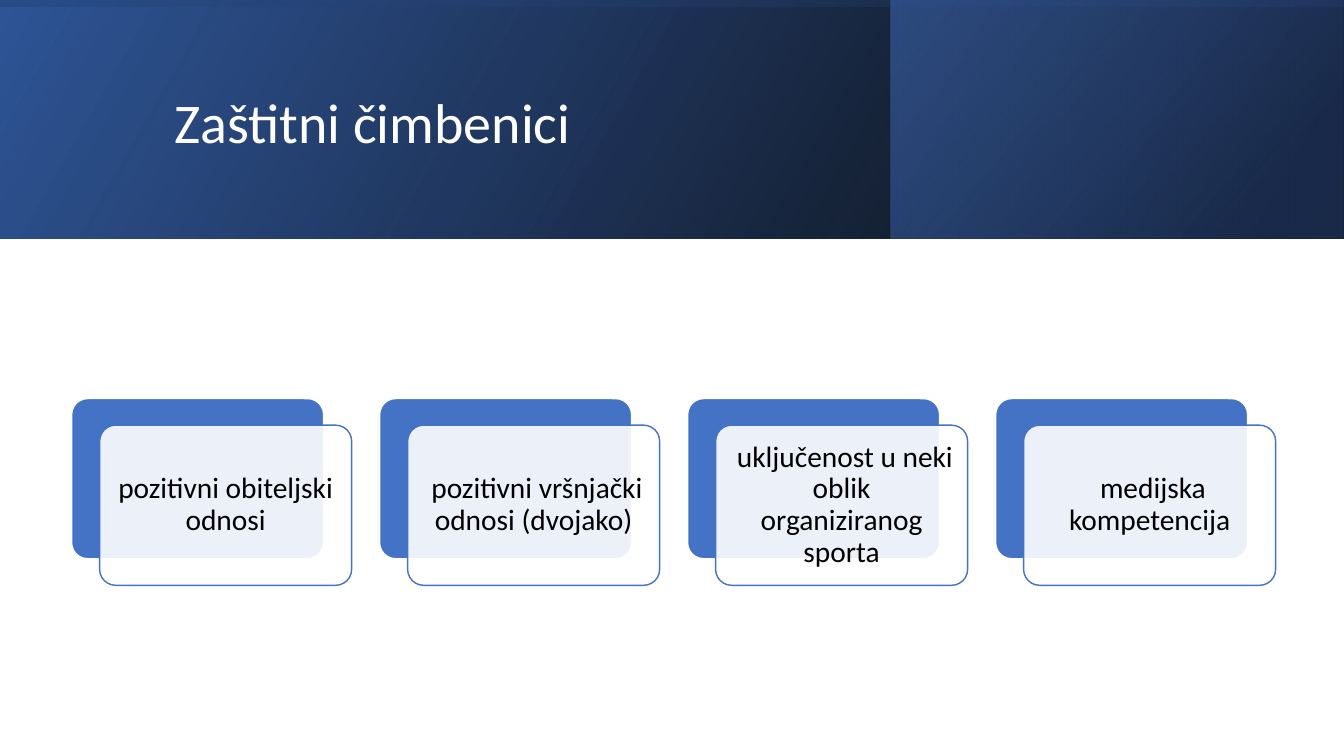
import pptx
import pptx.util
import pptx.dml.color
import pptx.enum.shapes
import pptx.enum.text
import pptx.oxml
import pptx.oxml.ns

Pt = pptx.util.Pt
KIND = pptx.enum.shapes.MSO_SHAPE
ALIGN = pptx.enum.text.PP_ALIGN
NS = pptx.oxml.ns.nsdecls("a")
BLUE = "4472C4"
WHITE = "FFFFFF"
WIDE, HIGH = 960, 540
BAND = 170.6


def tint(code):
    return pptx.dml.color.RGBColor.from_string(code)


def write(shape, text, size=21, color="000000", align=ALIGN.CENTER, inset=(6.3, 6.3), after=0):
    frame = shape.text_frame
    frame.word_wrap = True
    frame.vertical_anchor = pptx.enum.text.MSO_ANCHOR.MIDDLE
    frame.margin_left = frame.margin_right = Pt(inset[0])
    frame.margin_top = frame.margin_bottom = Pt(inset[1])
    para = frame.paragraphs[0]
    para.alignment = align
    para.line_spacing = 0.9
    para.space_after = Pt(after)
    run = para.add_run()
    run.text = text
    run.font.name = "Calibri"
    run.font.size = Pt(size)
    run.font.color.rgb = tint(color)


def block(slide, kind, box):
    shape = slide.shapes.add_shape(kind, *map(Pt, box))
    shape.shadow.inherit = False
    return shape


def fade(slide, box, stops, angle, turn=0):
    shape = block(slide, KIND.RECTANGLE, box)
    shape.line.fill.background()
    shape.rotation = turn
    props = shape.element.spPr
    props.xfrm.set("flipH", "1")
    marks = "".join(
        f'<a:gs pos="{pos * 1000}"><a:srgbClr val="{code}">'
        f'<a:alpha val="{alpha * 1000}"/></a:srgbClr></a:gs>'
        for pos, code, alpha in stops
    )
    grad = pptx.oxml.parse_xml(
        f'<a:gradFill {NS} rotWithShape="1"><a:gsLst>{marks}</a:gsLst>'
        f'<a:lin ang="{angle * 60000}" scaled="0"/></a:gradFill>'
    )
    props.prstGeom.addnext(grad)


def panel(slide, box, fill, line, alpha=100):
    shape = block(slide, KIND.ROUNDED_RECTANGLE, box)
    shape.adjustments[0] = 0.1
    shape.fill.solid()
    shape.fill.fore_color.rgb = tint(fill)
    if alpha < 100:
        color = shape.element.spPr.find(".//" + pptx.oxml.ns.qn("a:srgbClr"))
        color.append(pptx.oxml.parse_xml(f'<a:alpha {NS} val="{alpha * 1000}"/>'))
    shape.line.color.rgb = tint(line)
    shape.line.width = Pt(1)
    return shape


def card(slide, left, top, text):
    wide, high = 180, 114.4
    panel(slide, (left, top, wide, high), BLUE, WHITE)
    front = panel(slide, (left + 20, top + 19, wide, high), WHITE, BLUE, alpha=90)
    write(front, text, after=7.35)


def main():
    deck = pptx.Presentation()
    deck.slide_width = Pt(WIDE)
    deck.slide_height = Pt(HIGH)
    slide = deck.slides.add_slide(deck.slide_layouts[6])

    fade(slide, (0, 0, WIDE, BAND), [(0, "000000", 96), (100, "2F5597", 100)], 330)
    fade(slide, (636.5, 0, 323, BAND), [(19, "203864", 68), (100, BLUE, 48)], 320)
    shift = (WIDE - BAND) / 2
    fade(slide, (shift, -shift, BAND, WIDE), [(23, "2F5597", 16), (99, "000000", 45)], 350, turn=270)

    title = slide.shapes.add_textbox(*map(Pt, (108.7, 27.4, 765.4, 123.8)))
    write(title, " Zaštitni čimbenici", size=40, color=WHITE, align=ALIGN.LEFT, inset=(7.2, 3.6))

    labels = [
        "pozitivni obiteljski odnosi",
        " pozitivni vršnjački odnosi (dvojako)",
        " uključenost u neki oblik organiziranog sporta",
        " medijska kompetencija",
    ]
    for index, label in enumerate(labels):
        card(slide, 51.2 + 220 * index, 284.7, label)

    deck.save("out.pptx")


if __name__ == "__main__":
    main()
